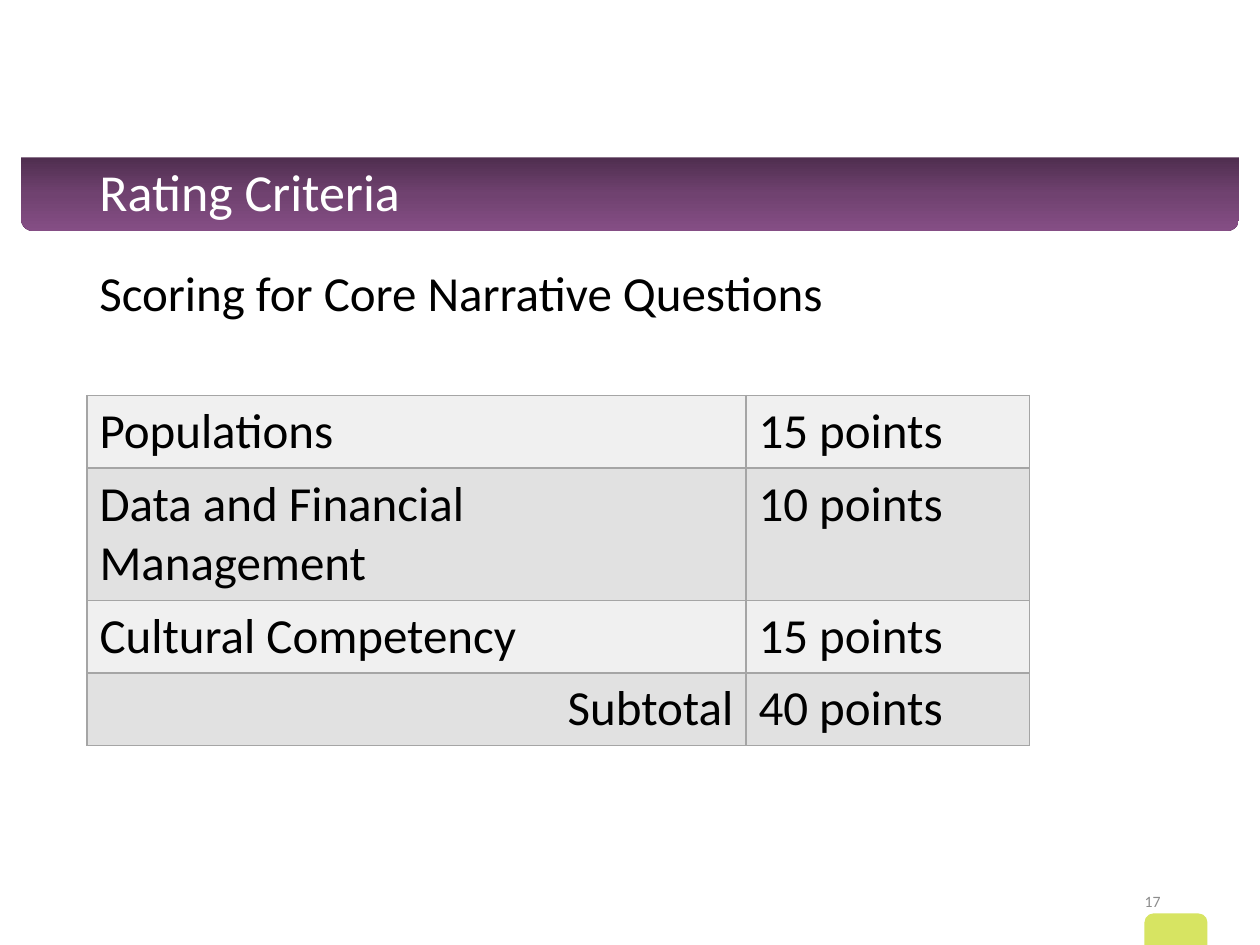
from copy import deepcopy
from dataclasses import dataclass

from pptx import Presentation
from pptx.dml.color import RGBColor as Rgb
from pptx.enum import shapes, text
from pptx.oxml import parse_xml
from pptx.oxml.ns import nsdecls, qn
from pptx.util import Pt


@dataclass(frozen=True)
class Theme:
    font: str = "Calibri"
    head: float = 29.7
    body: float = 28
    small: float = 9
    white: str = "FFFFFF"
    ink: str = "000000"
    grey: str = "8C8C8C"
    rule: str = "A5A5A5"
    lime: str = "D7E462"
    rows: tuple = ("F0F0F0", "E1E1E1")
    fade: tuple = ("4F2E4F", "704270", "854E85")


THEME = Theme()
LEFT, WIDE = 49.7, 620.6
ROWS = [
    ("Populations", "15 points"),
    ("Data and Financial Management", "10 points"),
    ("Cultural Competency", "15 points"),
    ("Subtotal", "40 points"),
]
COLS = (376.6, 162)
HIGH = (41.5, 75.6, 41.5, 41.5)


def style(frame, size, color, align=text.PP_ALIGN.LEFT):
    for para in frame.paragraphs:
        para.alignment = align
        for run in para.runs:
            run.font.name = THEME.font
            run.font.size = Pt(size)
            run.font.color.rgb = Rgb.from_string(color)


def add_text(slide, box, words, size, color, align=text.PP_ALIGN.LEFT,
             anchor=text.MSO_ANCHOR.MIDDLE, space=None):
    frame = slide.shapes.add_textbox(*map(Pt, box)).text_frame
    frame.word_wrap = True
    frame.vertical_anchor = anchor
    frame.text = words
    frame.paragraphs[0].line_spacing = space
    style(frame, size, color, align)


def add_tab(slide, box, top, base):
    """Add a bar whose top and bottom corners are rounded by the given shares."""
    kind = shapes.MSO_SHAPE.ROUND_2_SAME_RECTANGLE
    tab = slide.shapes.add_shape(kind, *map(Pt, box))
    tab.adjustments[0], tab.adjustments[1] = top, base
    tab.shadow.inherit = False
    tab.line.fill.background()
    return tab


def fade(shape, colors):
    """Fill from top to bottom with three evenly spaced colours."""
    shape.fill.gradient()
    shape.fill.gradient_angle = 270
    stops = shape._element.spPr.find(".//" + qn("a:gsLst"))
    stops.insert(1, deepcopy(stops[0]))
    for i, (stop, color) in enumerate(zip(shape.fill.gradient_stops, colors)):
        stop.position = i / 2
        stop.color.rgb = Rgb.from_string(color)


def edge(cell):
    props = cell._tc.get_or_add_tcPr()
    for side in "LRTB":
        props.append(parse_xml(
            f'<a:ln{side} {nsdecls("a")} w="12700"><a:solidFill>'
            f'<a:srgbClr val="{THEME.rule}"/></a:solidFill></a:ln{side}>'))


def add_scores(slide, top):
    box = map(Pt, (LEFT, top, sum(COLS), sum(HIGH)))
    table = slide.shapes.add_table(len(ROWS), len(COLS), *box).table
    table.first_row = table.horz_banding = False
    for col, width in zip(table.columns, COLS):
        col.width = Pt(width)
    for r, (row, high) in enumerate(zip(ROWS, HIGH)):
        table.rows[r].height = Pt(high)
        for c, words in enumerate(row):
            cell = table.cell(r, c)
            cell.text = words
            edge(cell)
            cell.fill.solid()
            cell.fill.fore_color.rgb = Rgb.from_string(THEME.rows[r % 2])
            total = r == len(ROWS) - 1 and c == 0
            align = text.PP_ALIGN.RIGHT if total else text.PP_ALIGN.LEFT
            style(cell.text_frame, THEME.body, THEME.ink, align)


def main():
    deck = Presentation()
    deck.slide_width, deck.slide_height = Pt(720), Pt(540)
    slide = deck.slides.add_slide(deck.slide_layouts[6])

    band = add_tab(slide, (12, 90, 696, 42), 0, 0.17)
    fade(band, THEME.fade)
    tab = add_tab(slide, (654, 522, 36, 30), 0.17, 0)
    tab.fill.solid()
    tab.fill.fore_color.rgb = Rgb.from_string(THEME.lime)

    add_text(slide, (LEFT, 90, WIDE, 42), "Rating Criteria",
             THEME.head, THEME.white, space=0.9)
    add_text(slide, (LEFT, 150, WIDE, 42),
             "Scoring for Core Narrative Questions", THEME.body, THEME.ink,
             anchor=text.MSO_ANCHOR.TOP, space=0.9)
    add_text(slide, (508.3, 500.5, 162, 28.8), "17", THEME.small, THEME.grey,
             align=text.PP_ALIGN.RIGHT)
    add_scores(slide, 226)
    deck.save("out.pptx")


if __name__ == "__main__":
    main()
